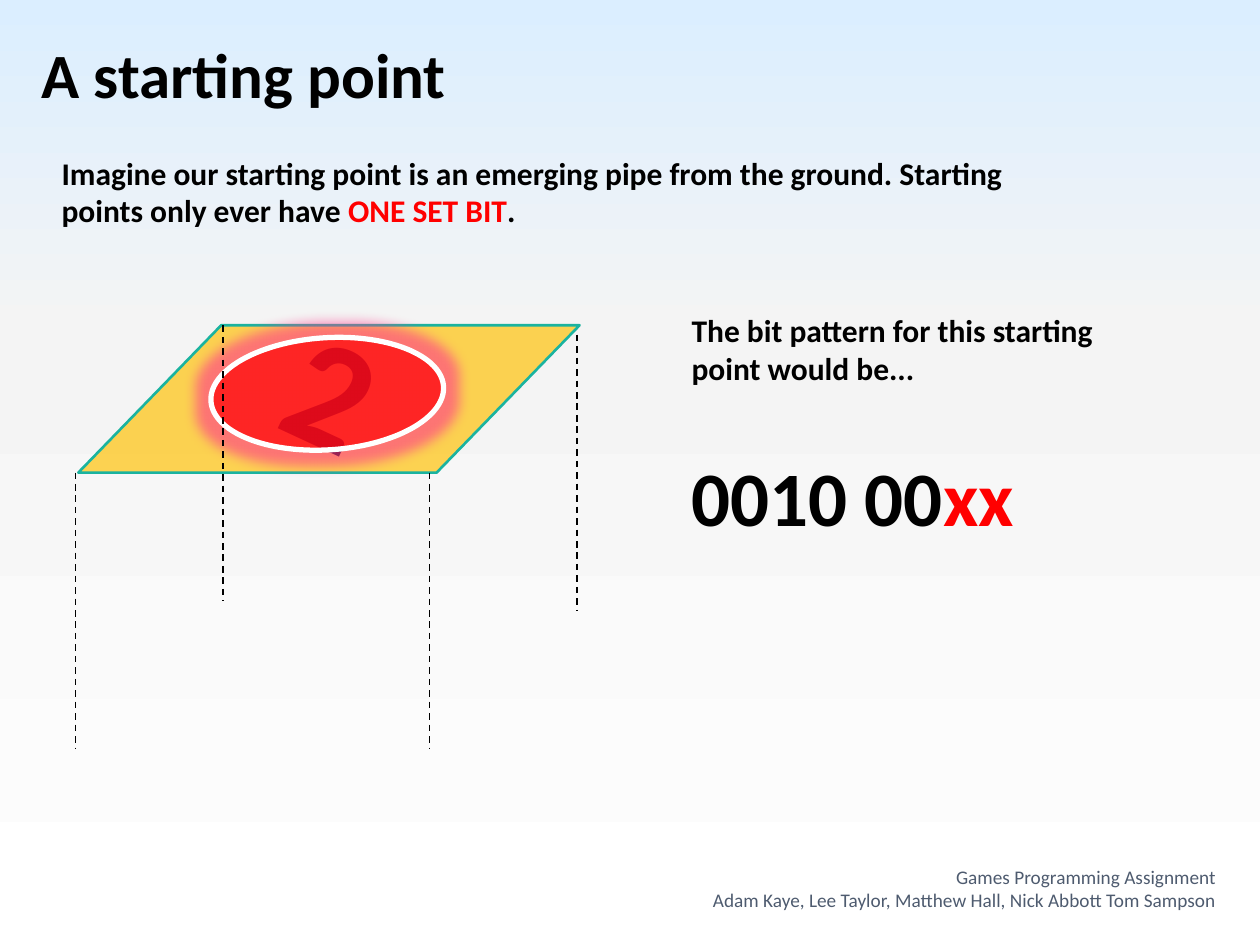
from lxml import etree
from pptx import Presentation
from pptx import util as u
from pptx.dml.color import RGBColor
from pptx.enum import dml, shapes, text
from pptx.oxml import ns

COLOURS = {
    "ink": "000000", "red": "FF0000", "white": "FFFFFF", "footer": "4E5B6F",
    "ground": "FFC000", "edge": "1AB39F", "glow": "FF388C",
    "grey": "F4F4F4", "sky": "DBEEFF",
}
BACKGROUND = [(0, "white"), (65, "grey"), (100, "sky")]
BOLD = {"name": "Calibri", "bold": True}
SMALL = {"name": "Calibri", "bold": False}

HEADINGS = [
    ((16.6, 16.6, 455.8, 51), 36, [("A starting point", "ink")]),
    ((28.1, 84.2, 602, 51), 18, [
        ("Imagine our starting point is an emerging pipe from the ground. "
         "Starting points only ever have ", "ink"),
        ("ONE SET BIT", "red"), (".", "ink")]),
    ((388.1, 174.2, 281.5, 51), 18, [
        ("The bit pattern for this starting point would be...", "ink")]),
    ((388.1, 253.4, 264.2, 60.5), 44, [("0010 00", "ink"), ("xx", "red")]),
]
DIGIT = ((160.6, 169.9, 84.2, 113.8), 88, [("2", "ink")])
FOOTER = ((264.2, 495.4, 437.8, 28.8), [
    "Games Programming Assignment",
    "Adam Kaye, Lee Taylor, Matthew Hall, Nick Abbott Tom Sampson",
])
GROUND = (44.8, 185.9, 286.4, 84.2)
PIPE_MOUTH = (120.4, 193, 133.2, 64.1)
PIPE_EDGES = [(127.4, 185.9), (43.2, 270), (245.5, 270), (329.8, 191.3)]
PIPE_DEPTH = 157.5


def colour(name):
    return RGBColor.from_string(COLOURS[name])


def points(values):
    return [u.Pt(value) for value in values]


def apply(target, formats):
    for name, value in formats.items():
        setattr(target, name, value)


def add(parent, tag, **attributes):
    return etree.SubElement(parent, ns.qn(tag), attributes)


def set_alpha(colour_node, percent):
    add(colour_node, "a:alpha", val=str(percent * 1000))


def paint_background(page):
    fill = page.background.fill
    fill.gradient()
    fill.gradient_angle = 90
    stops = page.background._cSld.find(".//" + ns.qn("a:gsLst"))
    for old in list(stops):
        stops.remove(old)
    for position, name in BACKGROUND:
        stop = add(stops, "a:gs", pos=str(position * 1000))
        add(stop, "a:srgbClr", val=COLOURS[name])


def add_span(para, wording, size, shade, font):
    span = para.add_run()
    span.text = wording
    apply(span.font, {**font, "size": u.Pt(size)})
    span.font.color.rgb = colour(shade)


def add_box(page, place, **formats):
    box = page.shapes.add_textbox(*points(place))
    apply(box.text_frame, {"word_wrap": True, **formats})
    return box


def add_heading(page, place, size, spans):
    box = add_box(page, place)
    for wording, shade in spans:
        add_span(box.text_frame.paragraphs[0], wording, size, shade, BOLD)
    return box


def add_footer(page, place, lines):
    frame = add_box(page, place, vertical_anchor=text.MSO_ANCHOR.BOTTOM).text_frame
    for index, wording in enumerate(lines):
        para = frame.add_paragraph() if index else frame.paragraphs[0]
        para.alignment = text.PP_ALIGN.RIGHT
        add_span(para, wording, 11, "footer", SMALL)


def add_surface(page, kind, place, fill, alpha, line, width):
    surface = page.shapes.add_shape(kind, *points(place))
    surface.shadow.inherit = False
    surface.fill.solid()
    surface.fill.fore_color.rgb = colour(fill)
    set_alpha(surface.fill._xPr.find(".//" + ns.qn("a:srgbClr")), alpha)
    surface.line.color.rgb = colour(line)
    surface.line.width = u.Pt(width)
    return surface


def add_glow(surface, radius, alpha):
    effects = surface._element.spPr.find(ns.qn("a:effectLst"))
    glow = add(effects, "a:glow", rad=str(u.Pt(radius)))
    set_alpha(add(glow, "a:srgbClr", val=COLOURS["glow"]), alpha)


def add_pipe_edge(page, left, top):
    edge = page.shapes.add_connector(
        shapes.MSO_CONNECTOR.STRAIGHT, *points((left, top, left, top + PIPE_DEPTH)))
    edge.line.color.rgb = colour("ink")
    apply(edge.line, {"width": u.Pt(0.94), "dash_style": dml.MSO_LINE.DASH})
    add(edge._element.spPr, "a:effectLst")


def main():
    deck = Presentation()
    apply(deck, {"slide_width": u.Pt(720), "slide_height": u.Pt(540)})
    page = deck.slides.add_slide(deck.slide_layouts[6])
    paint_background(page)
    for heading in HEADINGS:
        add_heading(page, *heading)

    ground = add_surface(page, shapes.MSO_SHAPE.PARALLELOGRAM, GROUND,
                         "ground", 67, "edge", 1.5)
    ground.adjustments[0] = 0.97
    add_heading(page, *DIGIT).rotation = 24.9
    mouth = add_surface(page, shapes.MSO_SHAPE.OVAL, PIPE_MOUTH,
                        "red", 68, "white", 3)
    mouth.rotation = 356.4
    add_glow(mouth, 14, 60)

    for left, top in PIPE_EDGES:
        add_pipe_edge(page, left, top)
    add_footer(page, *FOOTER)
    deck.save("out.pptx")


if __name__ == "__main__":
    main()
